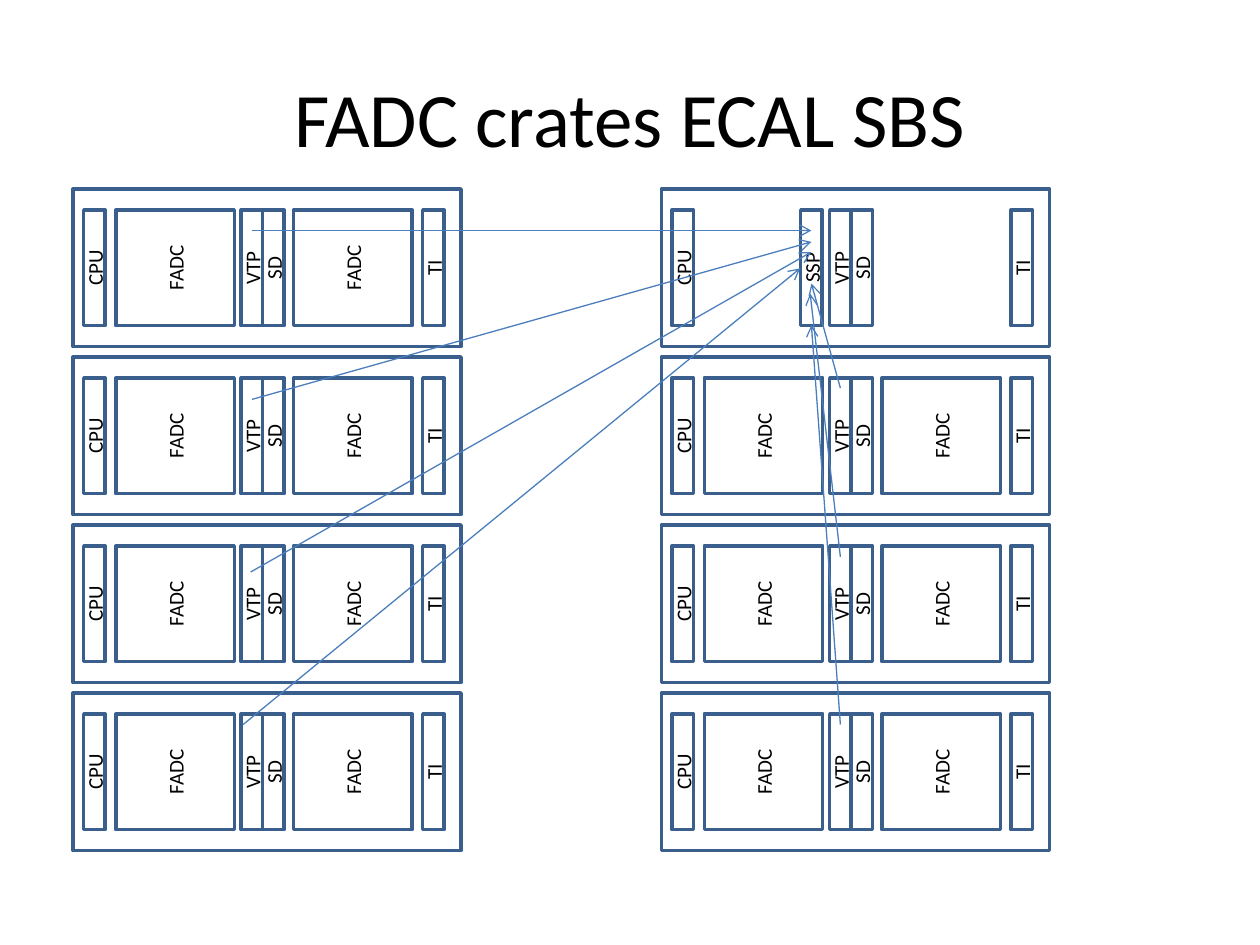
"""Build the slide showing how the FADC crates feed the SSP crate."""
from lxml import etree
from pptx import Presentation, util as u
from pptx.dml.color import RGBColor
from pptx.enum import shapes, text
from pptx.oxml.ns import qn

TITLE = "FADC crates ECAL SBS"
FONT = "Calibri"
COLORS = {"text": "000000", "box": "3A5F8C", "link": "4B7EBC"}

SLOT, FADC_WIDTH, MODULE_HEIGHT = 0.17, 0.94, 0.92
COMMON = [("CPU", 0.17, SLOT), ("VTP", 1.42, SLOT), ("SD", 1.59, SLOT), ("TI", 2.86, SLOT)]
FADC_CRATE = COMMON + [("FADC", 0.81, FADC_WIDTH), ("FADC", 2.22, FADC_WIDTH)]
SSP_CRATE = COMMON + [("SSP", 1.19, SLOT)]

CRATE_WIDTH, CRATE_HEIGHT = 3.08, 1.25
COLUMNS = (0.58, 5.25)
TOP, PITCH, ROWS = 1.5, 4 / 3, 4

LINKS = [
    ((2, 1.83), (6.44, 1.83)),
    ((2, 3.17), (6.44, 1.92)),
    ((1.99, 4.54), (6.44, 2)),
    ((1.93, 5.75), (6.35, 2.13)),
    ((6.67, 3.08), (6.44, 2.25)),
    ((6.67, 4.42), (6.43, 2.33)),
    ((6.67, 5.75), (6.44, 2.58)),
]


def color(name):
    return RGBColor.from_string(COLORS[name])


def write(sp, words, size):
    tf = sp.text_frame
    tf.word_wrap = True
    tf.vertical_anchor = text.MSO_ANCHOR.MIDDLE
    tf.text = words
    p = tf.paragraphs[0]
    p.alignment = text.PP_ALIGN.CENTER
    font = p.runs[0].font
    font.name, font.size = FONT, u.Pt(size)
    font.color.rgb = color("text")


def add_box(parent, x, y, w, h):
    sp = parent.add_shape(shapes.MSO_SHAPE.RECTANGLE, *map(u.Inches, (x, y, w, h)))
    sp.shadow.inherit = False
    sp.fill.background()
    sp.line.color.rgb = color("box")
    sp.line.width = u.Pt(2)
    return sp


def add_crate(parent, x, y, modules):
    add_box(parent, x, y, CRATE_WIDTH, CRATE_HEIGHT)
    for name, center, thickness in modules:
        left = x + center - MODULE_HEIGHT / 2
        top = y + (CRATE_HEIGHT - thickness) / 2
        sp = add_box(parent, left, top, MODULE_HEIGHT, thickness)
        sp.rotation = 270
        write(sp, name, 12)


def add_link(parent, start, end):
    cx = parent.add_connector(shapes.MSO_CONNECTOR.STRAIGHT, *map(u.Inches, start + end))
    cx.line.color.rgb = color("link")
    cx.line.width = u.Pt(0.75)
    etree.SubElement(cx.line._get_or_add_ln(), qn("a:tailEnd"), type="arrow")
    etree.SubElement(cx._element.spPr, qn("a:effectLst"))


def main():
    prs = Presentation()
    prs.slide_width, prs.slide_height = u.Inches(10), u.Inches(7.5)
    s = prs.slides.add_slide(prs.slide_layouts[6])
    title = s.shapes.add_textbox(*map(u.Inches, (0.5, 0.3, 9, 1.25)))
    write(title, TITLE, 44)
    for x in COLUMNS:
        for row in reversed(range(ROWS)):
            is_ssp = x == COLUMNS[-1] and row == 0
            parent = s.shapes if is_ssp else s.shapes.add_group_shape().shapes
            add_crate(parent, x, TOP + row * PITCH, SSP_CRATE if is_ssp else FADC_CRATE)
    for start, end in LINKS:
        add_link(s.shapes, start, end)
    prs.save("out.pptx")


if __name__ == "__main__":
    main()
